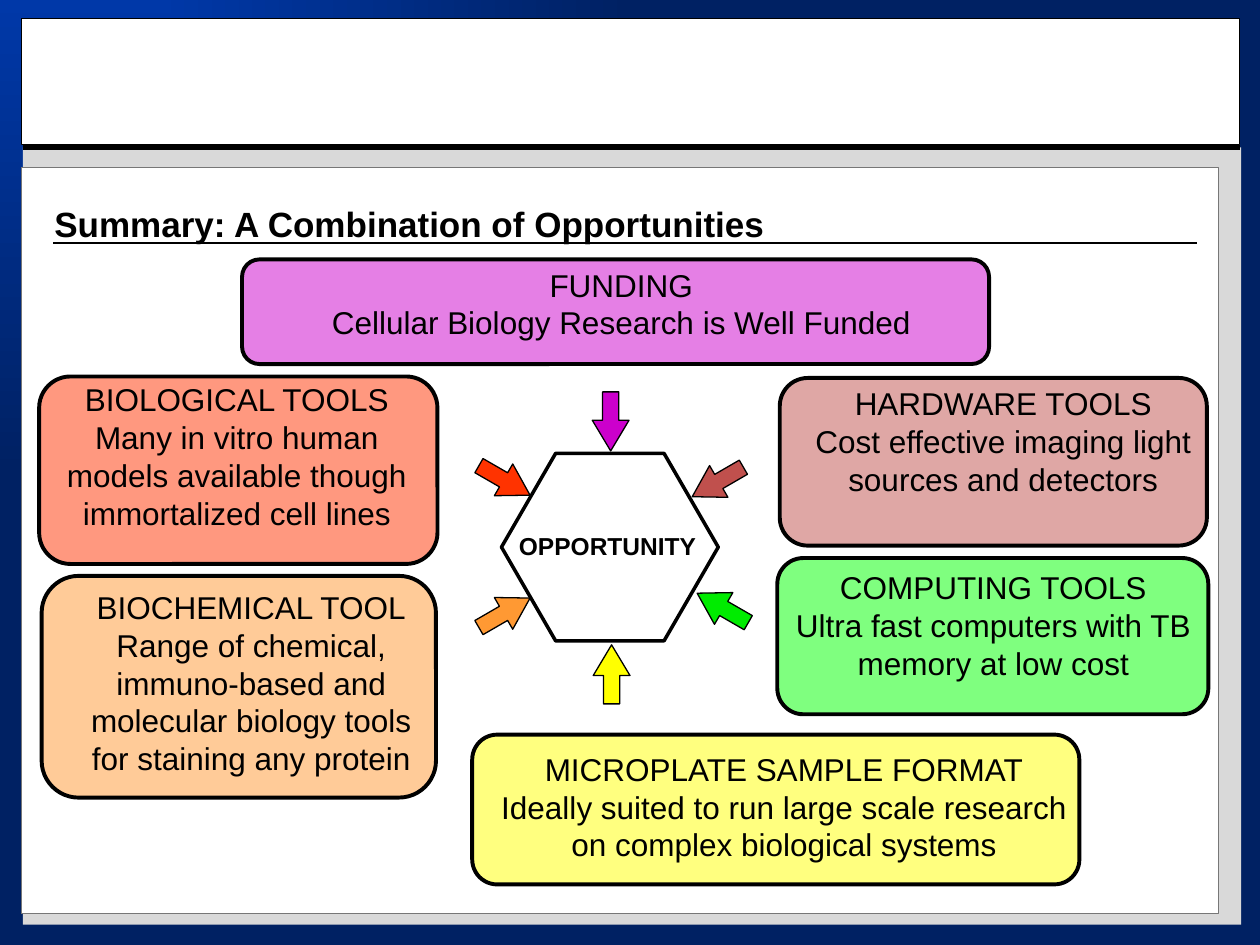
from typing import NamedTuple

from lxml.etree import SubElement
from pptx import Presentation
from pptx.dml.color import RGBColor
from pptx.enum.shapes import MSO_CONNECTOR, MSO_SHAPE as SHAPE
from pptx.enum.text import MSO_ANCHOR, MSO_AUTO_SIZE as AUTO, PP_ALIGN
from pptx.oxml.ns import qn
from pptx.util import Cm, Pt

COLORS = {
    "bg_light": "0038A8", "bg_dark": "002163", "shade": "D9D9D9",
    "frame": "777777", "white": "FFFFFF", "black": "000000",
    "purple": "CC00CC", "brown": "C0504D", "red": "FF3300",
    "orange": "FF9933", "yellow": "FFFF00", "green": "00FF00",
    "arrow_green": "00EC00",
}


class Box(NamedTuple):
    left: float
    top: float
    width: float
    height: float

    def lengths(self) -> list:
        return [Cm(v) for v in self]


class Card(NamedTuple):
    heading: str
    detail: str
    color: str
    frame: Box
    text: Box
    wrap: bool = True


class Arrow(NamedTuple):
    left: float
    top: float
    angle: int
    color: str


CARDS = [
    Card("FUNDING", "Cellular Biology Research is Well Funded", "purple",
         Box(4.88, 5.23, 15.06, 2.11), Box(6.38, 5.23, 12.29, 1.8), False),
    Card("HARDWARE TOOLS", "Cost effective imaging light sources and detectors",
         "brown", Box(15.72, 7.62, 8.61, 3.38), Box(15.88, 7.62, 8.69, 3.15)),
    Card("BIOLOGICAL TOOLS",
         "Many in vitro human models available though immortalized cell lines",
         "red", Box(0.79, 7.59, 8.03, 3.78), Box(0.66, 7.54, 8.23, 3.33)),
    Card("MICROPLATE SAMPLE FORMAT",
         "Ideally suited to run large scale research on complex biological systems",
         "yellow", Box(9.52, 14.81, 12.24, 3.02), Box(9.58, 14.99, 12.45, 3.33)),
    Card("BIOCHEMICAL TOOL",
         "Range of chemical, immuno-based and molecular biology tools "
         "for staining any protein",
         "orange", Box(0.84, 11.61, 7.95, 4.47), Box(1.24, 11.73, 7.65, 4.88)),
    Card("COMPUTING TOOLS", "Ultra fast computers with TB memory at low cost",
         "green", Box(15.67, 11.25, 8.69, 3.15), Box(15.72, 11.33, 8.61, 2.57)),
]
ARROWS = [
    Arrow(11.94, 7.9, 180, "purple"),
    Arrow(14.1, 9.12, 240, "brown"),
    Arrow(9.8, 9.09, 120, "red"),
    Arrow(14.2, 11.66, 300, "arrow_green"),
    Arrow(11.96, 13, 0, "yellow"),
    Arrow(9.8, 11.76, 60, "orange"),
]


def rgb(name: str) -> RGBColor:
    return RGBColor.from_string(COLORS[name])


def paint_background(s) -> None:
    """Gradient that spreads from the top left corner."""
    fill = s.background.fill
    fill.gradient()
    for stop, name in zip(fill.gradient_stops, ("bg_light", "bg_dark")):
        stop.color.rgb = rgb(name)
    grad = s._element.find(".//" + qn("a:gradFill"))
    grad.remove(grad.find(qn("a:lin")))
    focus = SubElement(grad, qn("a:path"), {"path": "rect"})
    SubElement(focus, qn("a:fillToRect"), {"r": "100000", "b": "100000"})


def add_shape(shapes, kind, box: Box, fill: str, line: str | None = "black",
              width: float = 0.75, adjust: tuple = (), alpha: int = 100):
    sp = shapes.add_shape(kind, *box.lengths())
    sp.shadow.inherit = False
    sp.fill.solid()
    sp.fill.fore_color.rgb = rgb(fill)
    if alpha < 100:
        color = sp._element.spPr.find(qn("a:solidFill")).find(qn("a:srgbClr"))
        SubElement(color, qn("a:alpha"), {"val": str(alpha * 1000)})
    if line:
        sp.line.color.rgb = rgb(line)
        sp.line.width = Pt(width)
    else:
        sp.line.fill.background()
    for i, value in enumerate(adjust):
        sp.adjustments[i] = value
    return sp


def add_rule(s, left: float, right: float, y: float, width: float) -> None:
    line = s.shapes.add_connector(MSO_CONNECTOR.STRAIGHT,
                                  Cm(left), Cm(y), Cm(right), Cm(y))
    line.line.color.rgb = rgb("black")
    line.line.width = Pt(width)
    SubElement(line._element.spPr, qn("a:effectLst"))


def write(sp, lines: list[str], size: int, bold: bool, align,
          frame_format: dict) -> None:
    tf = sp.text_frame
    for name, value in frame_format.items():
        setattr(tf, name, value)
    font_format = {"name": "Arial", "size": Pt(size), "bold": bold}
    for i, line in enumerate(lines):
        p = tf.add_paragraph() if i else tf.paragraphs[0]
        p.alignment = align
        r = p.add_run()
        r.text = line
        for name, value in font_format.items():
            setattr(r.font, name, value)
        r.font.color.rgb = rgb("black")


def add_text(shapes, box: Box, lines: list[str], size: int, bold: bool, align,
             wrap: bool) -> None:
    write(shapes.add_textbox(*box.lengths()), lines, size, bold, align,
          {"word_wrap": wrap, "auto_size": AUTO.SHAPE_TO_FIT_TEXT})


def add_card(s, card: Card) -> None:
    shapes = s.shapes.add_group_shape().shapes
    add_shape(shapes, SHAPE.ROUNDED_RECTANGLE, card.frame, card.color,
              width=2.25, adjust=(0.167,), alpha=50)
    add_text(shapes, card.text, [card.heading, card.detail], 18, False,
             PP_ALIGN.CENTER, card.wrap)


def add_arrow(s, arrow: Arrow) -> None:
    sp = add_shape(s.shapes, SHAPE.UP_ARROW, Box(arrow.left, arrow.top, 0.74, 1.19),
                   arrow.color, adjust=(0.444, 0.834))
    sp.rotation = arrow.angle


def add_title(s, box: Box, text: str) -> None:
    title = s.shapes.title
    title.left, title.top, title.width, title.height = box.lengths()
    write(title, [text], 20, True, PP_ALIGN.LEFT,
          {"vertical_anchor": MSO_ANCHOR.MIDDLE, "word_wrap": True,
           "auto_size": AUTO.NONE})
    s.shapes._spTree.append(title._element)  # bring in front of the panels


def main() -> None:
    prs = Presentation()
    prs.slide_width, prs.slide_height = Cm(25.4), Cm(19.05)
    s = prs.slides.add_slide(prs.slide_layouts[5])
    paint_background(s)

    add_shape(s.shapes, SHAPE.RECTANGLE, Box(0.46, 2.97, 24.56, 15.67), "shade", None)
    add_shape(s.shapes, SHAPE.RECTANGLE, Box(0.43, 3.38, 24.13, 15.04), "white", "frame")
    add_rule(s, 0.46, 24.99, 2.97, 3)
    add_rule(s, 1.07, 24.13, 4.9, 0.75)
    add_shape(s.shapes, SHAPE.RECTANGLE, Box(0.43, 0.38, 24.56, 2.54), "white")

    add_shape(s.shapes, SHAPE.HEXAGON, Box(10.11, 9.14, 4.37, 3.78), "white",
              width=2, adjust=(0.289, 1.155))
    add_text(s.shapes, Box(10.21, 10.59, 4.11, 0.86), ["OPPORTUNITY"], 14, True,
             PP_ALIGN.LEFT, False)
    for arrow in ARROWS:
        add_arrow(s, arrow)
    for card in CARDS:
        add_card(s, card)
    add_title(s, Box(0.84, 3.94, 23.29, 1.14), "Summary: A Combination of Opportunities")
    prs.save("out.pptx")


if __name__ == "__main__":
    main()
